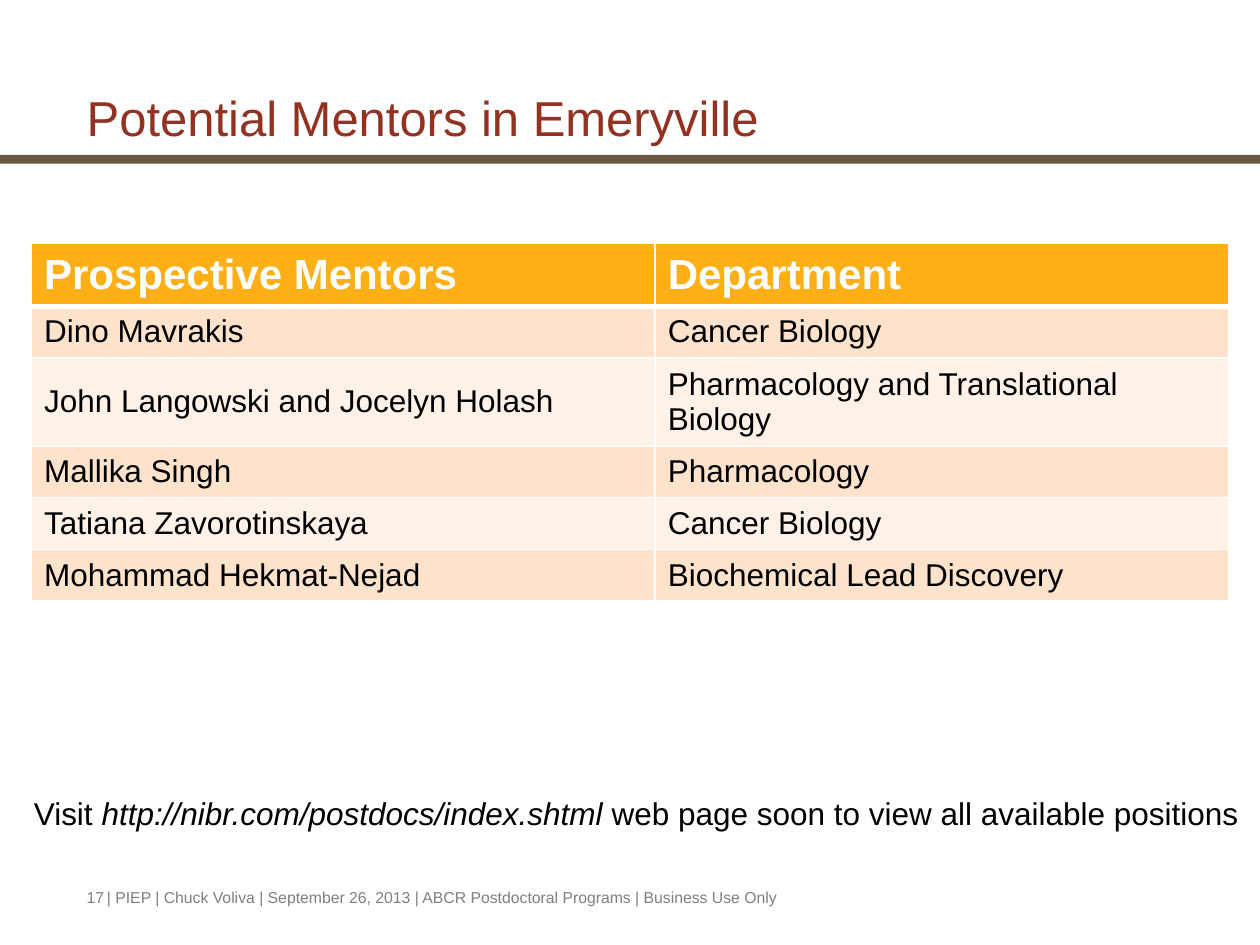
from pptx import Presentation
from pptx.dml.color import RGBColor
from pptx.enum.shapes import MSO_SHAPE as Shape
from pptx.enum.text import MSO_ANCHOR as Anchor
from pptx.oxml import parse_xml
from pptx.oxml.ns import nsdecls
from pptx.util import Inches, Pt

# Content
TITLE = "Potential Mentors in Emeryville"
MENTORS = [
    ("Prospective Mentors", "Department"),
    ("Dino Mavrakis", "Cancer Biology"),
    ("John Langowski and Jocelyn Holash", "Pharmacology and Translational Biology"),
    ("Mallika Singh", "Pharmacology"),
    ("Tatiana Zavorotinskaya", "Cancer Biology"),
    ("Mohammad Hekmat-Nejad", "Biochemical Lead Discovery"),
]
VISIT = ["Visit ", "http://nibr.com/postdocs/index.shtml",
         " web page soon to view all available positions"]
PAGE_NUMBER = "17"
FOOTER = "| PIEP | Chuck Voliva | September 26, 2013 | ABCR Postdoctoral Programs | Business Use Only"

# Layout and style
WIDTH, HEIGHT = 10, 7.5
MARGIN = 0.59
COLUMNS = [4.95, 4.55]
ROWS = [0.46, 0.41, 0.66, 0.41, 0.41, 0.41]
FONT = "Arial"
RUST, BROWN, AMBER = "923222", "6A5540", "FCAF17"
BANDS = ["FEF2E8", "FEE3CC"]
BLACK, WHITE, GREY = "000000", "FFFFFF", "7F7F7F"


def color(value):
    return RGBColor.from_string(value)


def style(para, size, value, bold=False):
    for span in para.runs:
        span.font.name = FONT
        span.font.size = Pt(size)
        span.font.bold = bold
        span.font.color.rgb = color(value)


def add_text(page, area, parts, size, value, wrap=True, anchor=Anchor.TOP):
    box = page.shapes.add_textbox(*map(Inches, area))
    frame = box.text_frame
    frame.word_wrap = wrap
    frame.vertical_anchor = anchor
    para = frame.paragraphs[0]
    for part in parts:
        para.add_run().text = part
    style(para, size, value)
    return para


def add_borders(cell, bottom):
    properties = cell._tc.get_or_add_tcPr()
    widths = {"lnL": 1, "lnR": 1, "lnT": 1, "lnB": bottom}
    for index, (side, width) in enumerate(widths.items()):
        properties.insert(index, parse_xml(
            f'<a:{side} {nsdecls("a")} w="{Pt(width)}"><a:solidFill>'
            f'<a:srgbClr val="{WHITE}"/></a:solidFill></a:{side}>'))


deck = Presentation()
deck.slide_width, deck.slide_height = Inches(WIDTH), Inches(HEIGHT)
page = deck.slides.add_slide(deck.slide_layouts[6])

# Title and rule
rule = page.shapes.add_shape(Shape.RECTANGLE, 0, Inches(1.23), Inches(WIDTH), Inches(0.07))
rule.shadow.inherit = False
rule.fill.solid()
rule.fill.fore_color.rgb = color(BROWN)
rule.line.fill.background()
title = add_text(page, (MARGIN, 0.67, 9.07, 0.55), [TITLE], 28, RUST, anchor=Anchor.BOTTOM)
title.line_spacing = 0.95

# Mentor table
table = page.shapes.add_table(
    len(ROWS), len(COLUMNS), Inches((WIDTH - sum(COLUMNS)) / 2), Inches(1.93),
    Inches(sum(COLUMNS)), Inches(sum(ROWS))).table
for column, width in zip(table.columns, COLUMNS):
    column.width = Inches(width)
for r, (height, texts) in enumerate(zip(ROWS, MENTORS)):
    table.rows[r].height = Inches(height)
    header = r == 0
    for c, text in enumerate(texts):
        cell = table.cell(r, c)
        cell.text_frame.text = text
        cell.vertical_anchor = Anchor.MIDDLE
        cell.fill.solid()
        cell.fill.fore_color.rgb = color(AMBER if header else BANDS[r % 2])
        add_borders(cell, 3 if header else 1)
        style(cell.text_frame.paragraphs[0], 24 if header else 18,
              WHITE if header else BLACK, header)

# Web page line with an italic address
visit = add_text(page, (0.17, 6.25, 9.85, 0.4), VISIT, 18, BLACK, wrap=False)
visit.runs[1].font.italic = True

# Footer
add_text(page, (MARGIN, 7, 0.44, 0.27), [PAGE_NUMBER], 9, GREY)
add_text(page, (0.75, 7, 7.08, 0.27), [FOOTER], 9, GREY)

deck.save("out.pptx")
